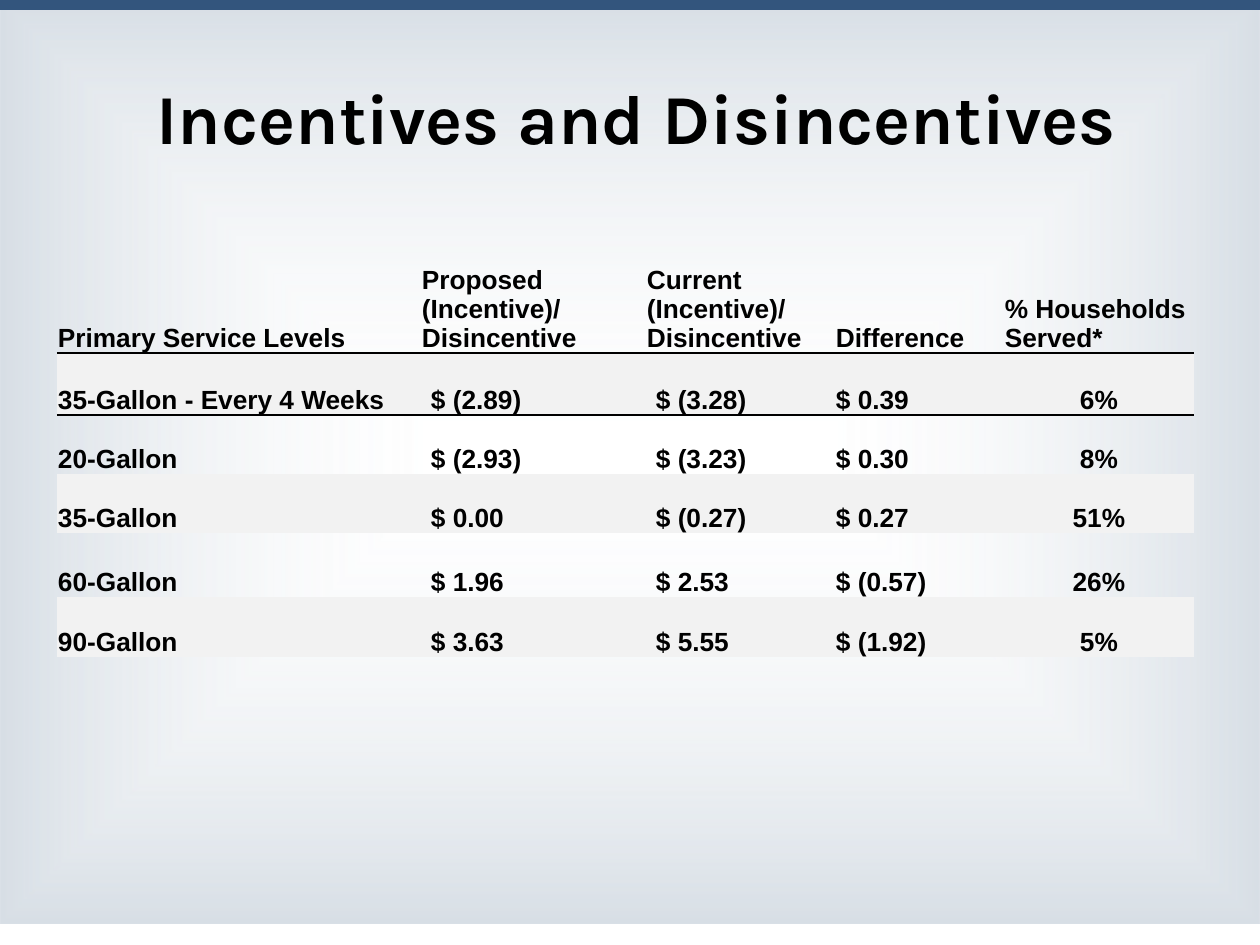
from typing import NamedTuple

from pptx import Presentation
from pptx.dml.color import RGBColor
from pptx.enum.shapes import MSO_SHAPE
from pptx.enum.text import MSO_ANCHOR, PP_ALIGN
from pptx.oxml import parse_xml
from pptx.oxml.ns import nsdecls, qn
from pptx.util import Emu, Pt

PX_PER_INCH = 126
COLORS = {
    "text": "000000",
    "band": "F2F2F2",
    "bar": "33557D",
    "glow_center": "FFFFFF",
    "glow_edge": "CCD5DE",
}
NO_STYLE = "{2D5ABB26-0587-4C30-8999-92F81FD0307C}"


class Column(NamedTuple):
    heading: str
    width: int
    align: PP_ALIGN = PP_ALIGN.LEFT
    inset: int = 1
    spacing: float = 1.0


class Level(NamedTuple):
    height: int
    values: tuple[str, ...]


COLUMNS = [
    Column("Primary Service Levels", 364),
    Column("Proposed (Incentive)/ Disincentive", 225, inset=10, spacing=1.07),
    Column("Current (Incentive)/ Disincentive", 189, inset=10, spacing=1.07),
    Column("Difference", 169),
    Column("% Households Served*", 190, align=PP_ALIGN.CENTER),
]
HEADER_HEIGHT = 96
LEVELS = [
    Level(62, ("35-Gallon - Every 4 Weeks", "$ (2.89)", "$ (3.28)", "$ 0.39", "6%")),
    Level(59, ("20-Gallon", "$ (2.93)", "$ (3.23)", "$ 0.30", "8%")),
    Level(59, ("35-Gallon", "$ 0.00", "$ (0.27)", "$ 0.27", "51%")),
    Level(64, ("60-Gallon", "$ 1.96", "$ 2.53", "$ (0.57)", "26%")),
    Level(60, ("90-Gallon", "$ 3.63", "$ 5.55", "$ (1.92)", "5%")),
]


def px(length: int) -> Emu:
    return Emu(round(length * 914400 / PX_PER_INCH))


def color(name: str) -> RGBColor:
    return RGBColor.from_string(COLORS[name])


def add_span(para, text: str, size: int, font: str) -> None:
    span = para.add_run()
    span.text = text
    span.font.size = Pt(size)
    span.font.name = font
    span.font.bold = True
    span.font.color.rgb = color("text")


def add_panel(page, height: int):
    """Add a borderless rectangle across the top of the page."""
    panel = page.shapes.add_shape(MSO_SHAPE.RECTANGLE, 0, 0, px(1260), px(height))
    panel.shadow.inherit = False
    panel.line.fill.background()
    return panel


def fill_glow(panel) -> None:
    """Fade from a clear center to tinted edges."""
    stops = "".join(
        f'<a:gs pos="{position}"><a:srgbClr val="{COLORS[name]}">'
        f'<a:alpha val="{alpha}"/></a:srgbClr></a:gs>'
        for position, name, alpha in
        [(0, "glow_center", 4000), (100000, "glow_edge", 77000)]
    )
    glow = parse_xml(
        f'<a:gradFill {nsdecls("a")} rotWithShape="1"><a:gsLst>{stops}</a:gsLst>'
        '<a:path path="shape"><a:fillToRect l="50000" t="50000" r="50000" b="50000"/>'
        '</a:path></a:gradFill>'
    )
    panel._element.spPr.find(qn("a:prstGeom")).addnext(glow)


def add_rule(cell, side: str) -> None:
    """Draw a one-point cell border; side is lnT or lnB."""
    cell._tc.get_or_add_tcPr().append(parse_xml(
        f'<a:{side} {nsdecls("a")} w="12700"><a:solidFill>'
        f'<a:srgbClr val="{COLORS["text"]}"/></a:solidFill></a:{side}>'
    ))


def fill_cell(cell, text: str, column: Column, banded: bool) -> None:
    cell.vertical_anchor = MSO_ANCHOR.BOTTOM
    cell.margin_left = cell.margin_right = px(column.inset)
    cell.margin_top = px(1 if column.inset == 1 else 0)
    cell.margin_bottom = 0
    if banded:
        cell.fill.solid()
        cell.fill.fore_color.rgb = color("band")
    else:
        cell.fill.background()
    para = cell.text_frame.paragraphs[0]
    para.alignment = column.align
    para.line_spacing = column.spacing
    add_span(para, text, 15, "Arial")


def add_rate_table(page) -> None:
    heights = [HEADER_HEIGHT] + [level.height for level in LEVELS]
    width = sum(column.width for column in COLUMNS)
    table = page.shapes.add_table(
        len(heights), len(COLUMNS), px(57), px(257), px(width), px(sum(heights))
    ).table
    table.first_row = table.horz_banding = False
    table._tbl.tblPr.find(qn("a:tableStyleId")).text = NO_STYLE
    for row, height in zip(table.rows, heights):
        row.height = px(height)

    for index, column in enumerate(COLUMNS):
        table.columns[index].width = px(column.width)
        # Heading, with a rule between it and the first level
        heading = table.cell(0, index)
        add_rule(heading, "lnB")
        add_rule(table.cell(1, index), "lnT")
        fill_cell(heading, column.heading, Column(column.heading, column.width), False)
        # Service levels, every other row banded
        for number, level in enumerate(LEVELS, start=1):
            fill_cell(table.cell(number, index), level.values[index], column, number % 2 == 1)


def main() -> None:
    deck = Presentation()
    deck.slide_width, deck.slide_height = px(1260), px(945)
    page = deck.slides.add_slide(deck.slide_layouts[5])

    # Backdrop
    fill_glow(add_panel(page, 924))
    bar = add_panel(page, 10)
    bar.fill.solid()
    bar.fill.fore_color.rgb = color("bar")

    # Title, brought in front of the backdrop
    title = page.shapes.title
    page.shapes._spTree.append(title._element)
    title.left, title.top, title.width, title.height = px(42), px(38), px(1188), px(158)
    title.text_frame.vertical_anchor = MSO_ANCHOR.MIDDLE
    para = title.text_frame.paragraphs[0]
    para.alignment = PP_ALIGN.CENTER
    add_span(para, "Incentives and Disincentives", 40, "Karla")

    # Rates
    add_rate_table(page)
    deck.save("out.pptx")


if __name__ == "__main__":
    main()
